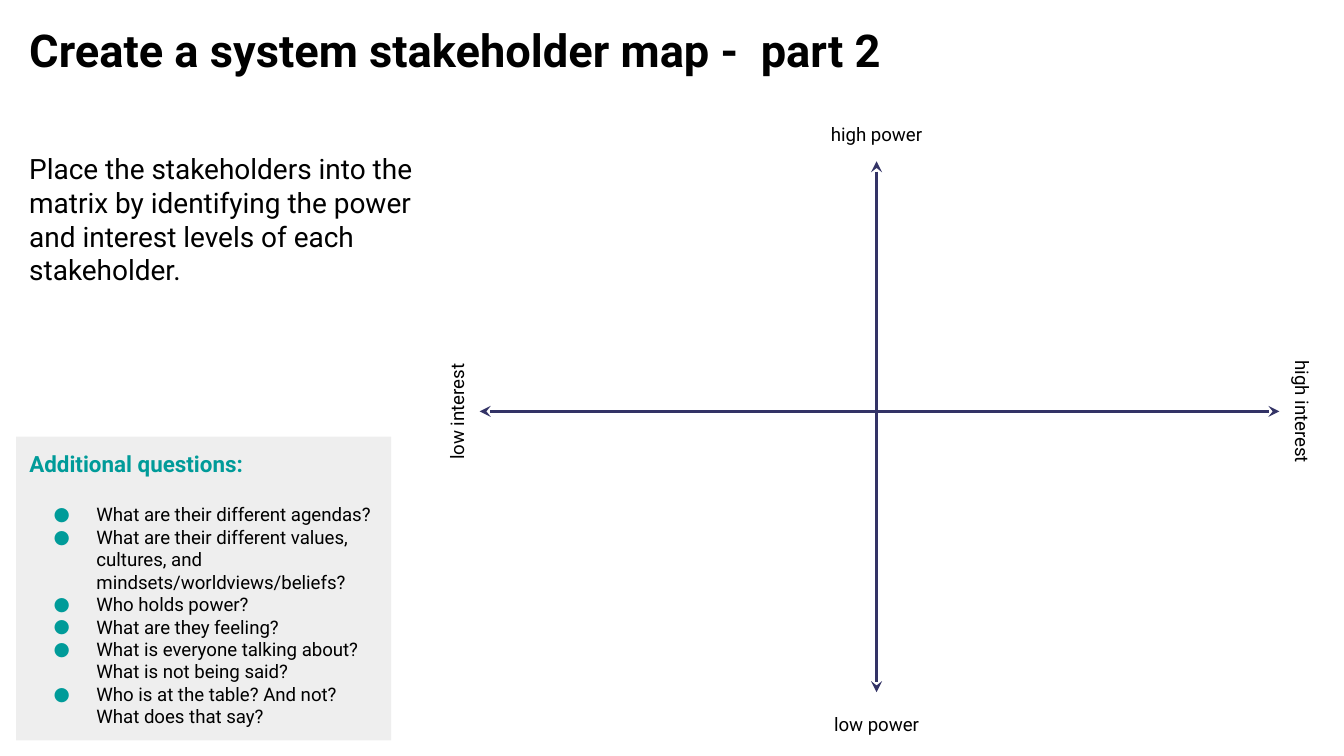
from typing import NamedTuple

from lxml import etree
from pptx import Presentation
from pptx.dml.color import RGBColor
from pptx.enum import shapes, text
from pptx.oxml import ns
from pptx.util import Pt

BLACK = RGBColor(0x00, 0x00, 0x00)
TEAL = RGBColor(0x00, 0x9B, 0x99)
NAVY = RGBColor(0x33, 0x33, 0x66)
GREY = RGBColor(0xEE, 0xEE, 0xEE)
FONT = "Roboto"
INSET = 7.2
LEFT = 8.6
LABEL_W, LABEL_H = 96.5, 22.3


class Box(NamedTuple):
    left: float
    top: float
    width: float
    height: float


class Axis(NamedTuple):
    x1: float
    y1: float
    x2: float
    y2: float


class Label(NamedTuple):
    words: str
    center_x: float
    center_y: float
    rotation: int = 0


TITLE = "Create a system stakeholder map -  part 2"
TASK = ("Place the stakeholders into the matrix by identifying the power "
        "and interest levels of each stakeholder.")
QUESTIONS = [
    "What are their different agendas?",
    "What are their different values, cultures, and mindsets/worldviews/beliefs?",
    "Who holds power?",
    "What are they feeling?",
    "What is everyone talking about? What is not being said?",
    "Who is at the table? And not? What does that say?",
]
AXES = [Axis(469.6, 86.4, 469.6, 370.8), Axis(257, 220.4, 685.4, 220.4)]
LABELS = [
    Label("low power", 469.6, 385.6),
    Label("high power", 469.6, 69.5),
    Label("high interest", 699.8, 220.6, 90),
    Label("low interest", 242.6, 220.6, 270),
]


def set_up_frame(tf) -> None:
    tf.word_wrap = True
    tf.auto_size = text.MSO_AUTO_SIZE.NONE
    tf.vertical_anchor = text.MSO_ANCHOR.TOP
    tf.margin_left = tf.margin_right = Pt(INSET)
    tf.margin_top = tf.margin_bottom = Pt(INSET)


def add_run(p, words: str, size: float, color: RGBColor = BLACK,
            bold: bool = False) -> None:
    r = p.add_run()
    r.text = words
    r.font.name = FONT
    r.font.size = Pt(size)
    r.font.bold = bold
    r.font.color.rgb = color


def add_text(s, box: Box, words: str, size: float, bold: bool = False,
             align=text.PP_ALIGN.LEFT):
    sp = s.shapes.add_textbox(*map(Pt, box))
    set_up_frame(sp.text_frame)
    p = sp.text_frame.paragraphs[0]
    p.alignment = align
    add_run(p, words, size, bold=bold)
    return sp


def add_bullet(p) -> None:
    """Give the paragraph a teal dot and a hanging indent."""
    pPr = p._p.get_or_add_pPr()
    pPr.set("marL", str(Pt(36)))
    pPr.set("indent", str(Pt(-23)))
    color = etree.SubElement(pPr, ns.qn("a:buClr"))
    etree.SubElement(color, ns.qn("a:srgbClr"), val=str(TEAL))
    etree.SubElement(pPr, ns.qn("a:buFont"), typeface=FONT)
    etree.SubElement(pPr, ns.qn("a:buChar"), char="●")


def add_questions(s, box: Box) -> None:
    sp = s.shapes.add_shape(shapes.MSO_SHAPE.RECTANGLE, *map(Pt, box))
    sp.shadow.inherit = False
    sp.fill.solid()
    sp.fill.fore_color.rgb = GREY
    sp.line.fill.background()
    tf = sp.text_frame
    set_up_frame(tf)
    heading = tf.paragraphs[0]
    heading.alignment = text.PP_ALIGN.LEFT
    heading.space_after = Pt(14)
    add_run(heading, "Additional questions:", 12, TEAL, bold=True)
    for question in QUESTIONS:
        p = tf.add_paragraph()
        p.alignment = text.PP_ALIGN.LEFT
        add_bullet(p)
        add_run(p, question, 10)


def add_axis(s, axis: Axis) -> None:
    line = s.shapes.add_connector(shapes.MSO_CONNECTOR.STRAIGHT, *map(Pt, axis))
    line.line.color.rgb = NAVY
    line.line.width = Pt(1.5)
    ln = line.line._get_or_add_ln()
    for end in ("a:headEnd", "a:tailEnd"):
        etree.SubElement(ln, ns.qn(end), type="stealth")
    etree.SubElement(line._element.spPr, ns.qn("a:effectLst"))


def add_label(s, label: Label) -> None:
    box = Box(label.center_x - LABEL_W / 2, label.center_y - LABEL_H / 2,
              LABEL_W, LABEL_H)
    sp = add_text(s, box, label.words, 10, align=text.PP_ALIGN.CENTER)
    sp.rotation = label.rotation


def main() -> None:
    prs = Presentation()
    prs.slide_width, prs.slide_height = Pt(720), Pt(405)
    s = prs.slides.add_slide(prs.slide_layouts[6])
    add_text(s, Box(LEFT, 5, 672.5, 42.5), TITLE, 24.2, bold=True)
    add_questions(s, Box(LEFT, 234, 201, 162.7))
    for axis in AXES:
        add_axis(s, axis)
    for label in LABELS:
        add_label(s, label)
    add_text(s, Box(LEFT, 74.2, 225.4, 87.1), TASK, 15)
    prs.save("out.pptx")


if __name__ == "__main__":
    main()
